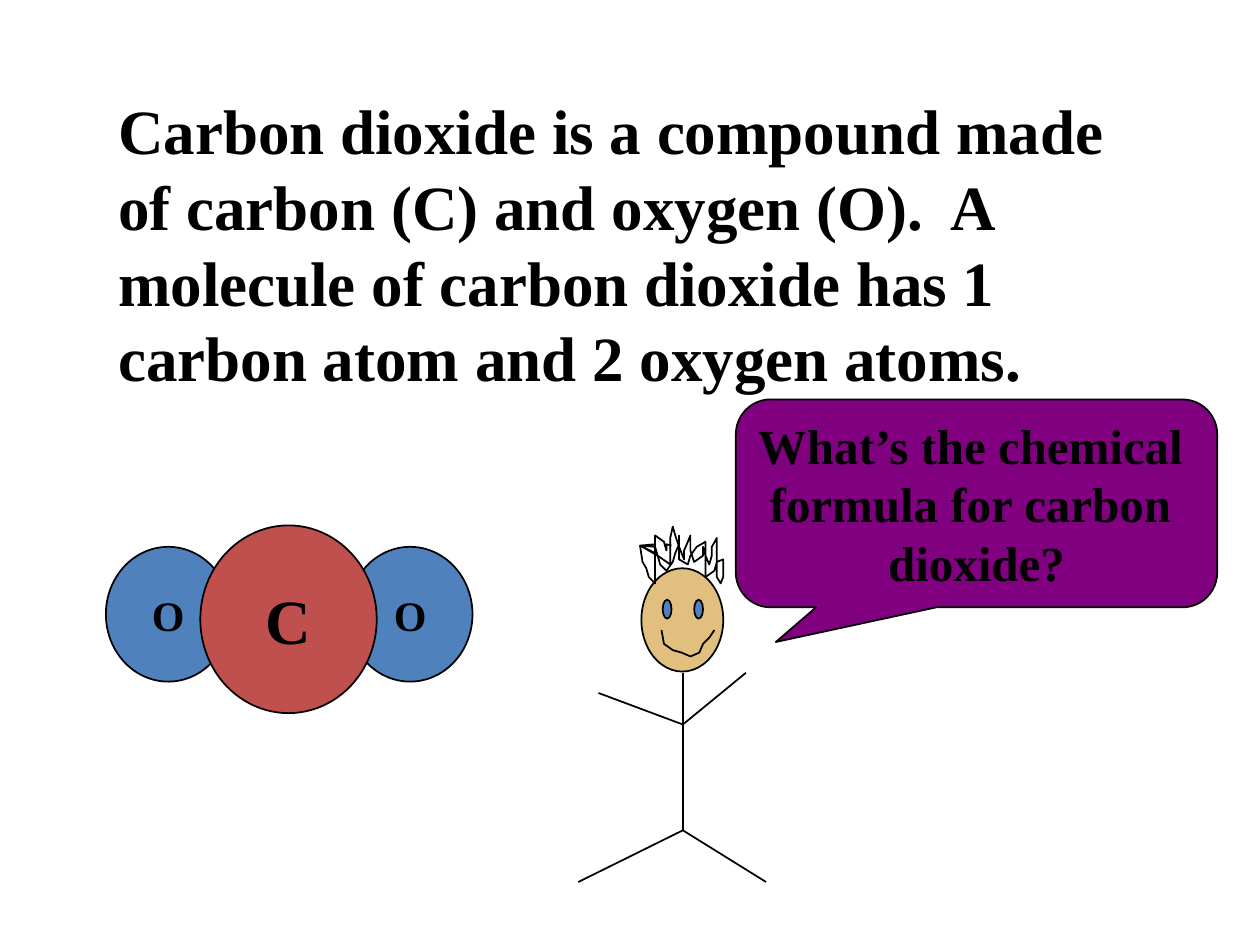
import pptx
import pptx.util
import pptx.dml.color
import pptx.enum.shapes
import pptx.enum.text
import lxml.etree
from dataclasses import dataclass

Inches = pptx.util.Inches
Pt = pptx.util.Pt
MSO_SHAPE = pptx.enum.shapes.MSO_SHAPE
PP_ALIGN = pptx.enum.text.PP_ALIGN


@dataclass(frozen=True)
class Theme:
    font: str = "Times New Roman"
    ink: str = "000000"
    blue: str = "4F81BD"
    red: str = "C0504D"
    purple: str = "800080"
    skin: str = "E1BF7E"
    statement_size: int = 36
    carbon_size: int = 36
    oxygen_size: int = 24
    question_size: int = 28
    line_width: int = 1


THEME = Theme()

# Freeform points in hundredths of an inch
HAIR = [
    (508, 433), (510, 446), (513, 451), (515, 458), (520, 463), (520, 458),
    (520, 451), (520, 446), (520, 439), (520, 432), (508, 433), (520, 434),
    (522, 441), (524, 448), (529, 453), (534, 446), (536, 439), (539, 432),
    (539, 425), (539, 430), (539, 437), (539, 444), (546, 448), (548, 441),
    (553, 434), (560, 430), (560, 437), (560, 444), (560, 451), (560, 458),
    (567, 453), (569, 446), (574, 444), (574, 451), (574, 458), (572, 463),
    (569, 458), (569, 448), (569, 441), (569, 434), (569, 427), (565, 434),
    (565, 441), (563, 448), (560, 441), (558, 434), (558, 441), (551, 446),
    (548, 437), (548, 432), (548, 425), (546, 430), (543, 437), (543, 444),
    (539, 434), (536, 425), (534, 418), (532, 427), (532, 434), (532, 441),
    (532, 448), (522, 441), (508, 433), (520, 439), (520, 444), (520, 439),
    (520, 432), (520, 425), (527, 430), (529, 437), (529, 432), (533, 433),
]
SMILE = [(525, 500), (527, 511), (534, 516), (541, 518), (548, 521),
         (555, 518), (558, 511), (563, 506), (567, 500)]


def rgb(value):
    return pptx.dml.color.RGBColor.from_string(value)


def set_attributes(target, values):
    for name, value in values.items():
        setattr(target, name, value)


def write_text(sp, lines, size, **frame):
    """Write one bold paragraph per line; frame holds text frame settings."""
    tf = sp.text_frame
    set_attributes(tf, frame)
    align = PP_ALIGN.LEFT if tf.word_wrap else PP_ALIGN.CENTER
    for i, line in enumerate(lines):
        p = tf.paragraphs[0] if i == 0 else tf.add_paragraph()
        p.alignment = align
        r = p.add_run()
        r.text = line
        set_attributes(r.font, {"name": THEME.font, "size": Pt(size), "bold": True})
        r.font.color.rgb = rgb(THEME.ink)


def outline(sp):
    sp.line.color.rgb = rgb(THEME.ink)
    sp.line.width = Pt(THEME.line_width)


def add_figure(shapes, kind, box, fill, lines=(), size=0):
    """Add a filled, outlined preset shape with optional centred text."""
    sp = shapes.add_shape(kind, *map(Inches, box))
    sp.shadow.inherit = False
    sp.fill.solid()
    sp.fill.fore_color.rgb = rgb(fill)
    outline(sp)
    if lines:
        write_text(sp, lines, size, word_wrap=False,
                   vertical_anchor=pptx.enum.text.MSO_ANCHOR.MIDDLE)
    return sp


def add_line(shapes, start, end):
    line = shapes.add_connector(pptx.enum.shapes.MSO_CONNECTOR.STRAIGHT,
                                *map(Inches, start + end))
    outline(line)
    lxml.etree.SubElement(line._element.spPr, pptx.oxml.ns.qn("a:effectLst"))


def add_stroke(shapes, points):
    builder = shapes.build_freeform(*points[0], scale=Inches(0.01))
    builder.add_line_segments(points[1:], close=False)
    sp = builder.convert_to_shape()
    sp.shadow.inherit = False
    sp.fill.background()
    outline(sp)


def add_statement(shapes):
    sp = shapes.add_textbox(*map(Inches, (0.84, 0.68, 8.25, 2.5)))
    write_text(sp, ["Carbon dioxide is a compound made of carbon (C) and oxygen (O).  "
                    "A molecule of carbon dioxide has 1 carbon atom and 2 oxygen atoms."],
               THEME.statement_size, word_wrap=True,
               auto_size=pptx.enum.text.MSO_AUTO_SIZE.SHAPE_TO_FIT_TEXT)


def add_molecule(shapes):
    group = shapes.add_group_shape().shapes
    for left in (0.84, 2.76):
        add_figure(group, MSO_SHAPE.OVAL, (left, 4.34, 0.99, 1.07), THEME.blue,
                   ["O"], THEME.oxygen_size)
    add_figure(group, MSO_SHAPE.OVAL, (1.59, 4.17, 1.4, 1.49), THEME.red,
               ["C"], THEME.carbon_size)


def add_question(shapes):
    sp = add_figure(shapes, MSO_SHAPE.ROUNDED_RECTANGULAR_CALLOUT,
                    (5.84, 3.17, 3.82, 1.65), THEME.purple,
                    ["What’s the chemical ", "formula for carbon ", "dioxide?"],
                    THEME.question_size)
    for i, value in enumerate((-0.417, 0.667, 0.167)):
        sp.adjustments[i] = value


def add_stick_figure(shapes):
    group = shapes.add_group_shape().shapes
    neck, shoulder, hip = (5.42, 5.34), (5.42, 5.75), (5.42, 6.59)
    add_figure(group, MSO_SHAPE.OVAL, (5.09, 4.51, 0.65, 0.82), THEME.skin)
    for start, end in ((neck, hip),
                       (hip, (4.59, 7)), (shoulder, (4.75, 5.5)),
                       (shoulder, (5.92, 5.34)), (hip, (6.08, 7))):
        add_line(group, start, end)
    add_stroke(group, HAIR)
    for left in (5.26, 5.51):
        add_figure(group, MSO_SHAPE.OVAL, (left, 4.76, 0.07, 0.15), THEME.blue)
    add_stroke(group, SMILE)


def main():
    prs = pptx.Presentation()
    set_attributes(prs, {"slide_width": Inches(10), "slide_height": Inches(7.5)})
    s = prs.slides.add_slide(prs.slide_layouts[6])
    for add_part in (add_statement, add_molecule, add_question, add_stick_figure):
        add_part(s.shapes)
    prs.save("out.pptx")


if __name__ == "__main__":
    main()
